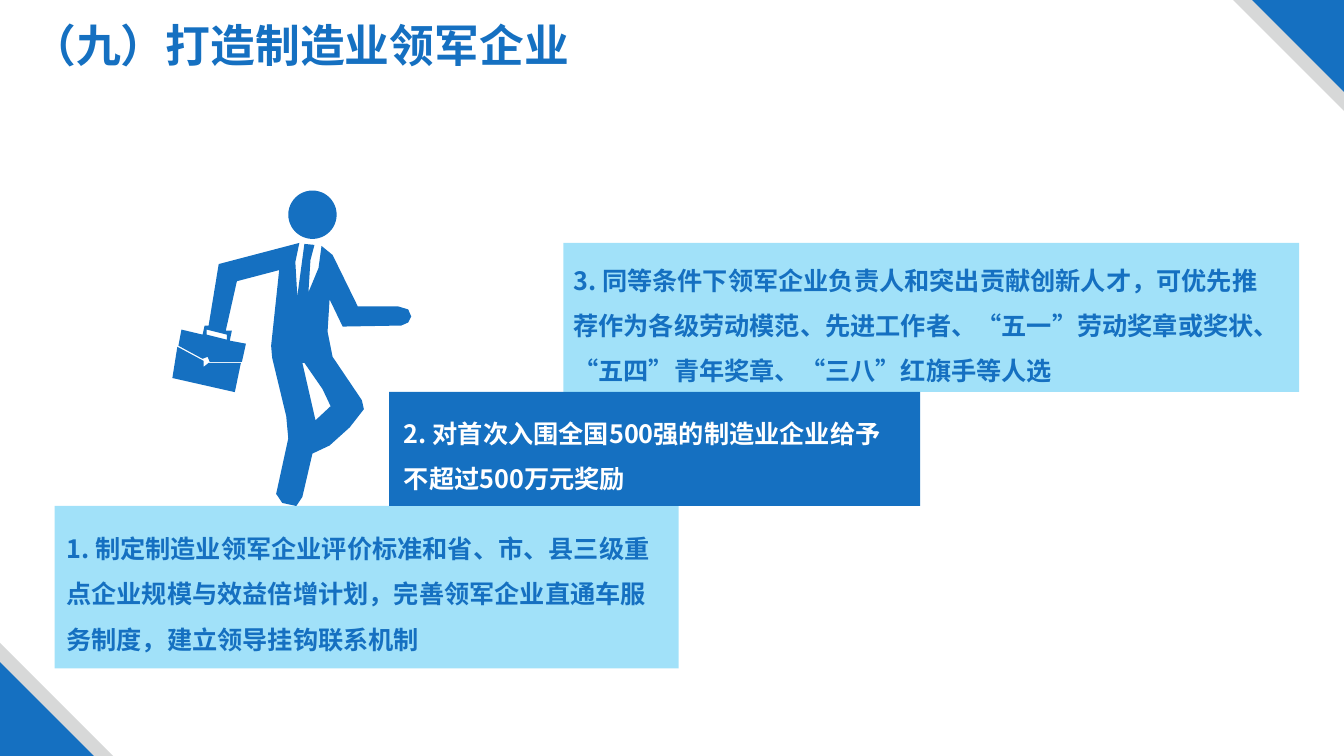
from lxml.etree import SubElement
from pptx import Presentation
from pptx.dml.color import RGBColor
from pptx.enum.shapes import MSO_SHAPE
from pptx.enum.text import MSO_AUTO_SIZE, PP_ALIGN
from pptx.oxml.ns import qn
from pptx.util import Pt

FONT = "Noto Sans CJK SC"
BLUE, SKY, GREY, WHITE = "1570C1", "00B0F0", "D7D8D8", "FFFFFF"
WIDTH, HEIGHT = 960, 540

# Content: text, then left, top, width, height of the text in points
TITLE = ("（九）打造制造业领军企业", (1.44, 9.36, 426.24, 46.08))

# Steps: text, text colour, text frame, block fill, opacity in percent, block frame
STEPS = [
    ("1. 制定制造业领军企业评价标准和省、市、县三级重点企业规模与效益倍增计划，完善领军企业直通车服务制度，建立领导挂钩联系机制",
     BLUE, (40.32, 366.5, 445.68, 105), SKY, 37, (39, 361.4, 445.7, 116)),
    ("2. 对首次入围全国500强的制造业企业给予不超过500万元奖励",
     WHITE, (281.5, 284.4, 371.5, 72), BLUE, 100, (277.9, 280, 379.4, 81.4)),
    ("3. 同等条件下领军企业负责人和突出贡献创新人才，可优先推荐作为各级劳动模范、先进工作者、“五一”劳动奖章或奖状、“五四”青年奖章、“三八”红旗手等人选",
     BLUE, (402.5, 175, 506.2, 105), SKY, 37, (402.5, 173.5, 525.6, 106.5)),
]

# Corner triangles: grey side, blue side, rotation
CORNERS = [(79.2, 65.7, 180), (80.8, 67, 0)]

# Walking man, in hundredths of an inch
HEAD = (286, 189, 48, 48)
BODY = [
    # Shoulders and tie
    (297, 241), (293, 260), (295, 294), (302, 242), (312, 243), (308, 258),
    (306, 290), (316, 266), (319, 244), (330, 253),
    # Front arm and hand
    (355, 304), (395, 304), (405, 307), (408, 314), (405, 320), (398, 323),
    (340, 324), (327, 297),
    # Front leg, foot and back
    (325, 329), (330, 354), (359, 397), (361, 406), (347, 424), (327, 442),
    (310, 450), (300, 493), (294, 502), (280, 499), (274, 490), (286, 435),
    (284, 413), (270, 355), (269, 343), (277, 268),
    # Rear arm, handle and top of the briefcase
    (235, 279), (224, 328), (230, 328), (228, 338), (244, 341), (240, 359),
    (208, 359), (206, 354), (201, 356), (177, 343), (180, 327), (201, 332),
    (203, 323), (207, 323), (217, 262),
]
HANDLE_GAP = [(205, 332), (225, 337), (225, 332), (205, 327)]
LEG_GAP = [(300, 360), (313, 417), (328, 403), (320, 386), (302, 360)]
BRIEFCASE = [(176, 344), (202, 358), (202, 364), (207, 360), (239, 360),
             (233, 389), (171, 375)]
UNIT = 0.72  # points in a hundredth of an inch


def paint(shape, color, opacity=100):
    shape.shadow.inherit = False
    shape.fill.solid()
    shape.fill.fore_color.rgb = RGBColor.from_string(color)
    shape.line.fill.background()
    if opacity < 100:
        tint = shape._element.spPr.find(qn("a:solidFill"))[0]
        SubElement(tint, qn("a:alpha"), val=str(opacity * 1000))


def add_block(shapes, kind, frame, color, opacity=100):
    block = shapes.add_shape(kind, *map(Pt, frame))
    paint(block, color, opacity)
    return block


def add_text(text, frame, size, color, align=PP_ALIGN.LEFT, spacing=1.0):
    box = page.shapes.add_textbox(*map(Pt, frame))
    box.text_frame.word_wrap = True
    box.text_frame.auto_size = MSO_AUTO_SIZE.SHAPE_TO_FIT_TEXT
    para = box.text_frame.paragraphs[0]
    para.text, para.alignment, para.line_spacing = text, align, spacing
    font = para.font
    font.name, font.size, font.bold = FONT, Pt(size), True
    font.color.rgb = RGBColor.from_string(color)
    SubElement(para._p.pPr.find(qn("a:defRPr")), qn("a:ea"), typeface=FONT)


def add_outline(shapes, outline, *gaps):
    builder = shapes.build_freeform(*outline[0], scale=Pt(UNIT))
    builder.add_line_segments(outline[1:])
    for gap in gaps:
        builder.move_to(*gap[0])
        builder.add_line_segments(gap[1:])
    paint(builder.convert_to_shape(), BLUE)


deck = Presentation()
deck.slide_width, deck.slide_height = Pt(WIDTH), Pt(HEIGHT)
page = deck.slides.add_slide(deck.slide_layouts[6])

# Corner decorations
for grey_side, blue_side, rotation in CORNERS:
    corner_group = page.shapes.add_group_shape()
    for side, color in ((grey_side, GREY), (blue_side, BLUE)):
        left, top = (WIDTH - side, 0) if rotation else (0, HEIGHT - side)
        triangle = add_block(corner_group.shapes, MSO_SHAPE.RIGHT_TRIANGLE,
                             (left, top, side, side), color)
        triangle.rotation = rotation

# Title
add_text(*TITLE, 32, BLUE, PP_ALIGN.CENTER)

# Walking man
man = page.shapes.add_group_shape()
add_outline(man.shapes, BODY, HANDLE_GAP, LEG_GAP)
add_outline(man.shapes, BRIEFCASE)
add_block(man.shapes, MSO_SHAPE.OVAL, [value * UNIT for value in HEAD], BLUE)

# Staircase blocks, then their texts
for _, _, _, fill, opacity, frame in STEPS:
    add_block(page.shapes, MSO_SHAPE.RECTANGLE, frame, fill, opacity)
for text, color, frame, _, _, _ in STEPS:
    add_text(text, frame, 18, color, spacing=1.5)

deck.save("out.pptx")
